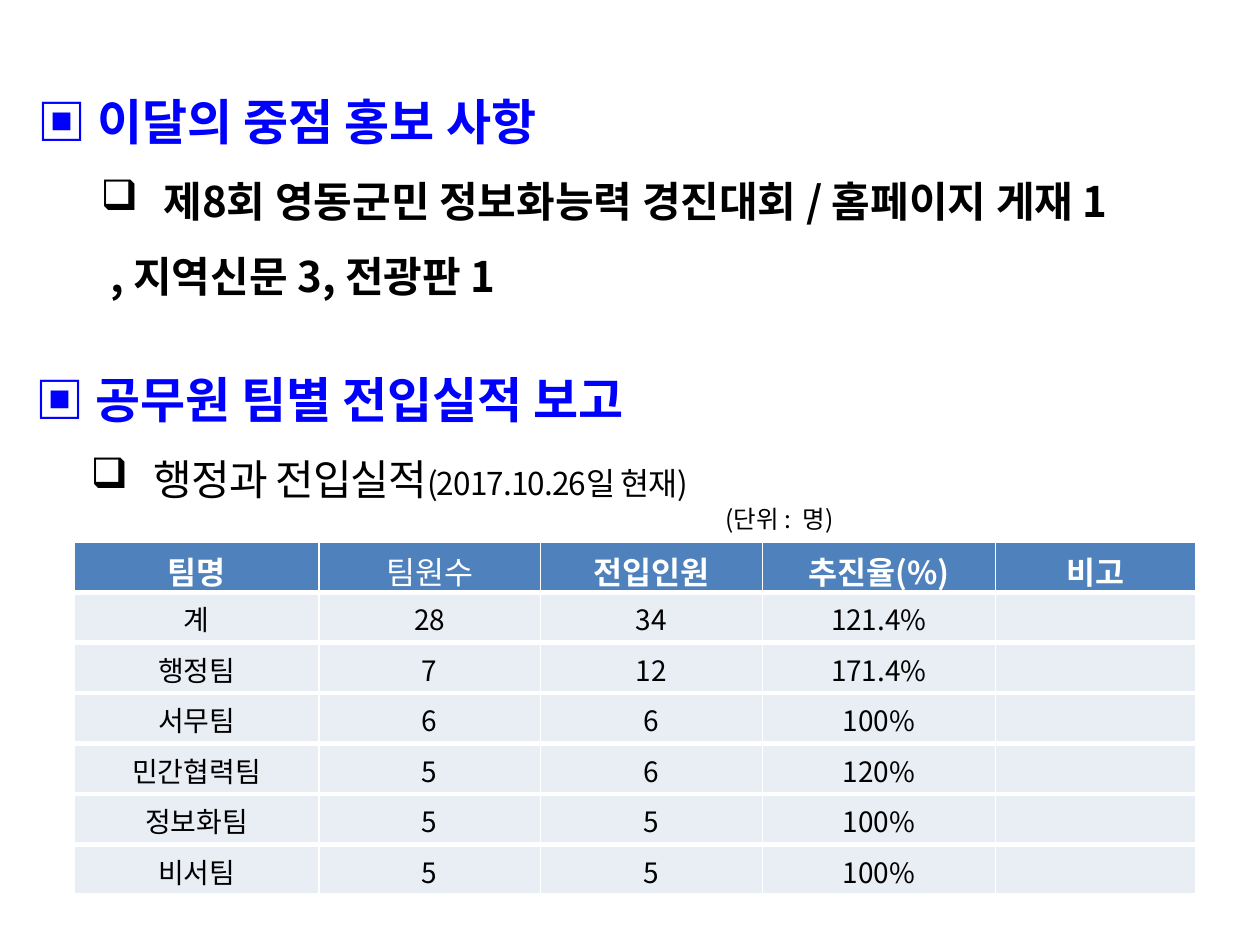
from lxml.etree import SubElement
from pptx import Presentation
from pptx.dml.color import RGBColor
from pptx.enum.text import MSO_ANCHOR, PP_ALIGN
from pptx.oxml.ns import qn
from pptx.util import Inches, Pt

FONT = "Noto Sans CJK KR"
BLUE = RGBColor(0x00, 0x00, 0xFF)
BLACK = RGBColor(0x00, 0x00, 0x00)
WHITE = RGBColor(0xFF, 0xFF, 0xFF)
HEADER_FILL = RGBColor(0x4F, 0x81, 0xBD)
ROW_FILL = RGBColor(0xE9, 0xED, 0xF4)

HEADERS = ["팀명", "팀원수", "전입인원", "추진율(%)", "비고"]
TEAMS = [
    ["계", "28", "34", "121.4%", ""],
    ["행정팀", "7", "12", "171.4%", ""],
    ["서무팀", "6", "6", "100%", ""],
    ["민간협력팀", "5", "6", "120%", ""],
    ["정보화팀", "5", "5", "100%", ""],
    ["비서팀", "5", "5", "100%", ""],
]
COLUMN_WIDTHS = [1.94, 1.76, 1.76, 1.85, 1.59]
HEADER_HEIGHT, ROW_HEIGHT = 0.16, 0.34


def style_span(span, size, color, bold=False):
    span.font.size = Pt(size)
    span.font.bold = bold
    span.font.color.rgb = color
    span.font.name = FONT
    SubElement(span.font._element, qn("a:ea")).set("typeface", FONT)


def add_text_box(page, left, top, width, height):
    box = page.shapes.add_textbox(
        Inches(left), Inches(top), Inches(width), Inches(height))
    box.text_frame.word_wrap = True
    return box.text_frame


def add_span(para, text, size, color=BLACK, bold=False):
    span = para.add_run()
    span.text = text
    style_span(span, size, color, bold)
    return span


def indent(para, margin, first=0.0, bullet=None):
    props = para._p.get_or_add_pPr()
    props.set("marL", str(Inches(margin)))
    props.set("indent", str(Inches(first)))
    if bullet:
        SubElement(props, qn("a:buChar")).set("char", bullet)


def add_heading(frame, text):
    para = frame.paragraphs[0]
    para.line_spacing = 1.5
    add_span(para, text, 28, BLUE, True)


def add_item(frame, text, bold=False, bullet=None):
    para = frame.add_paragraph()
    para.level = 1
    para.line_spacing = 1.5
    indent(para, 1, -0.5, bullet)
    return para, add_span(para, text, 24, bold=bold)


def add_promotion(page):
    frame = add_text_box(page, 0.2, 0.44, 9.43, 2.02)
    add_heading(frame, "▣ 이달의 중점 홍보 사항")
    add_item(frame, "제8회 영동군민 정보화능력 경진대회 / 홈페이지 게재 1", True, "❑")
    add_item(frame, " , 지역신문 3, 전광판 1", True)


def add_report(page):
    frame = add_text_box(page, 0.12, 2.65, 9.88, 6.38)
    add_heading(frame, "▣ 공무원 팀별 전입실적 보고")
    indent(frame.paragraphs[0], 0.56, -0.5)
    frame.paragraphs[0].space_before = Pt(5.6)
    para, title = add_item(frame, "행정과 전입실적", bullet="❑")
    date = add_span(para, "(2017.10.26일 현재)", 18)
    for span in (title, date):
        span.font._element.set("spc", "-50")
    unit = frame.add_paragraph()
    unit.level = 1
    indent(unit, 5.54)
    add_span(unit, "(단위 :  명)", 14)


def set_border(cell, side, width):
    line = SubElement(cell._tc.get_or_add_tcPr(), qn(f"a:{side}"), w=str(Pt(width)))
    fill = SubElement(line, qn("a:solidFill"))
    SubElement(fill, qn("a:srgbClr"), val=str(WHITE))


def fill_cell(cell, text, size, color, fill, bold, top_width):
    for side, width in (("lnL", 1), ("lnR", 1), ("lnT", top_width), ("lnB", 3)):
        set_border(cell, side, width)
    cell.fill.solid()
    cell.fill.fore_color.rgb = fill
    cell.vertical_anchor = MSO_ANCHOR.MIDDLE
    para = cell.text_frame.paragraphs[0]
    para.text = text
    para.alignment = PP_ALIGN.CENTER
    for span in para.runs:
        style_span(span, size, color, bold)


def add_team_table(page):
    height = HEADER_HEIGHT + ROW_HEIGHT * len(TEAMS)
    table = page.shapes.add_table(
        len(TEAMS) + 1, len(HEADERS), Inches(0.59), Inches(4.3),
        Inches(sum(COLUMN_WIDTHS)), Inches(height)).table
    for column, width in zip(table.columns, COLUMN_WIDTHS):
        column.width = Inches(width)
    for row in table.rows:
        row.height = Inches(ROW_HEIGHT)
    table.rows[0].height = Inches(HEADER_HEIGHT)
    for index, text in enumerate(HEADERS):
        fill_cell(table.cell(0, index), text, 18, WHITE, HEADER_FILL,
                  text != "팀원수", 1)
    for row, values in enumerate(TEAMS, 1):
        for index, text in enumerate(values):
            fill_cell(table.cell(row, index), text, 16, BLACK, ROW_FILL, False, 3)


def main():
    deck = Presentation()
    deck.slide_width, deck.slide_height = Inches(10), Inches(7.5)
    page = deck.slides.add_slide(deck.slide_layouts[6])
    add_promotion(page)
    add_report(page)
    add_team_table(page)
    deck.save("out.pptx")


if __name__ == "__main__":
    main()
